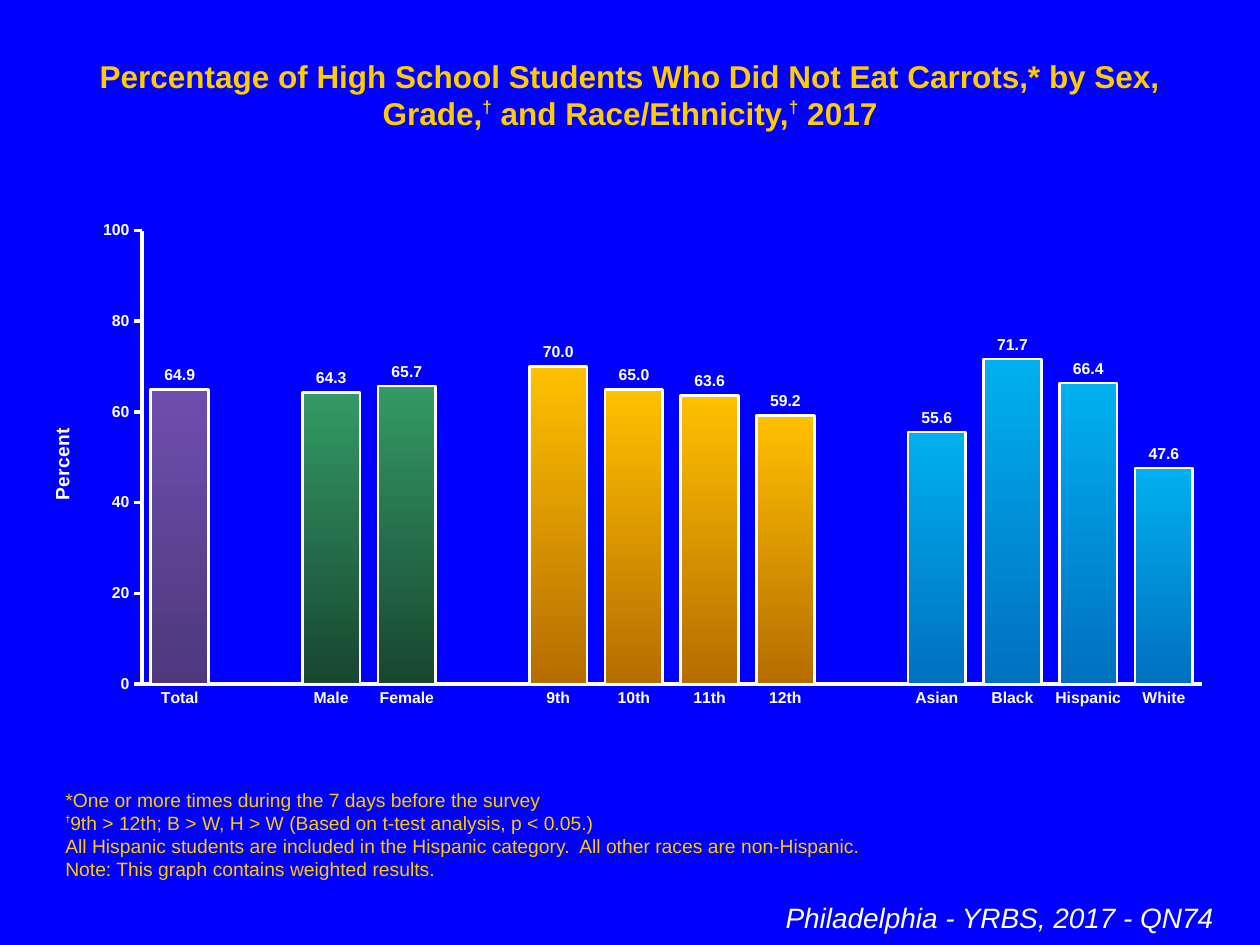
from dataclasses import dataclass

from lxml import etree
from pptx import Presentation
from pptx.chart.data import CategoryChartData
from pptx.dml.color import RGBColor
from pptx.enum.chart import XL_CHART_TYPE, XL_LABEL_POSITION, XL_TICK_MARK
from pptx.enum.text import MSO_ANCHOR, MSO_AUTO_SIZE, PP_ALIGN as Align
from pptx.oxml.ns import qn
from pptx.util import Inches, Pt


@dataclass(frozen=True)
class Theme:
    font: str = "Arial"
    background: str = "0000FF"
    accent: str = "FFCC00"
    light: str = "FFFFFF"
    series: str = "26CA59"
    title_size: int = 18
    title_mark_size: int = 17
    note_size: int = 11
    note_mark_size: int = 9
    source_size: int = 16
    axis_title_size: int = 11
    chart_size: int = 9
    axis_width: float = 2
    bar_line_width: float = 1.5


THEME = Theme()
MARK = "†"
TITLE = [["Percentage of High School Students Who Did Not Eat Carrots,* by Sex, Grade,",
          MARK, " and Race/Ethnicity,", MARK, " 2017"]]
NOTES = [
    ["*One or more times during the 7 days before the survey"],
    [MARK, "9th > 12th; B > W, H > W (Based on t-test analysis, p < 0.05.)"],
    ["All Hispanic students are included in the Hispanic category.  All other races are non-Hispanic."],
    ["Note: This graph contains weighted results."],
]
SOURCE = [["Philadelphia - YRBS, 2017 - QN74"]]
GROUPS = [
    (("6E4EAE", "4F387C"), [("Total", 64.9)]),
    (("339966", "18472F"), [("Male", 64.3), ("Female", 65.7)]),
    (("FFC000", "B66D00"), [("9th", 70.0), ("10th", 65.0), ("11th", 63.6), ("12th", 59.2)]),
    (("00B0F0", "0070C0"), [("Asian", 55.6), ("Black", 71.7), ("Hispanic", 66.4), ("White", 47.6)]),
]
PLOT_AREA = {"x": 0.1, "y": 0.04, "w": 0.88, "h": 0.9}


def color(value):
    """Return an RGB colour from its hex text."""
    return RGBColor.from_string(value)


def style_font(font, size, value, bold=False, italic=False):
    """Apply the theme font with the given look."""
    font.name = THEME.font
    font.size = Pt(size)
    font.bold = bold
    font.italic = italic
    font.color.rgb = color(value)


def add_text(slide, box, lines, size, value, align=Align.LEFT, anchor=MSO_ANCHOR.TOP,
             bold=False, italic=False, mark_size=None, mark_bold=False, mark_rise=0):
    """Add a text box whose dagger runs are raised."""
    shape = slide.shapes.add_textbox(*map(Inches, box))
    frame = shape.text_frame
    frame.word_wrap = True
    frame.auto_size = MSO_AUTO_SIZE.SHAPE_TO_FIT_TEXT
    frame.vertical_anchor = anchor
    for index, pieces in enumerate(lines):
        paragraph = frame.paragraphs[0] if index == 0 else frame.add_paragraph()
        paragraph.alignment = align
        for piece in pieces:
            run = paragraph.add_run()
            run.text = piece
            if piece == MARK:
                style_font(run.font, mark_size, value, mark_bold, italic)
                run._r.get_or_add_rPr().set("baseline", str(mark_rise * 1000))
            else:
                style_font(run.font, size, value, bold, italic)


def style_axis(axis, tick_mark):
    """Give an axis its line, labels and tick marks."""
    axis.has_major_gridlines = False
    axis.major_tick_mark = tick_mark
    axis.minor_tick_mark = XL_TICK_MARK.NONE
    axis.format.line.color.rgb = color(THEME.light)
    axis.format.line.width = Pt(THEME.axis_width)
    style_font(axis.tick_labels.font, THEME.chart_size, THEME.light, bold=True)


def place_plot_area(chart):
    """Fix the inner plot area as fractions of the chart."""
    plot_area = chart._chartSpace.find(".//" + qn("c:plotArea"))
    for old_layout in plot_area.findall(qn("c:layout")):
        plot_area.remove(old_layout)
    layout = etree.Element(qn("c:layout"))
    manual = etree.SubElement(layout, qn("c:manualLayout"))
    settings = {"layoutTarget": "inner", "xMode": "edge", "yMode": "edge", **PLOT_AREA}
    for name, value in settings.items():
        etree.SubElement(manual, qn(f"c:{name}")).set("val", str(value))
    plot_area.insert(0, layout)


def add_chart(slide):
    """Add the column chart with one gradient per group."""
    bars = []
    for gradient, members in GROUPS:
        if bars:
            bars.append(("", None, None))
        bars.extend((label, value, gradient) for label, value in members)
    data = CategoryChartData()
    data.categories = [label for label, _, _ in bars]
    data.add_series("Series 1", [value for _, value, _ in bars])
    box = map(Inches, (0.17, 1.67, 9.56, 4))
    chart = slide.shapes.add_chart(XL_CHART_TYPE.COLUMN_CLUSTERED, *box, data).chart
    chart.has_title = False
    chart.has_legend = False
    style_font(chart.font, THEME.title_size, THEME.light)
    place_plot_area(chart)

    style_axis(chart.category_axis, XL_TICK_MARK.NONE)
    value_axis = chart.value_axis
    style_axis(value_axis, XL_TICK_MARK.OUTSIDE)
    value_axis.minimum_scale = 0
    value_axis.maximum_scale = 100
    value_axis.major_unit = 20
    title_frame = value_axis.axis_title.text_frame
    title_frame.text = "Percent"
    style_font(title_frame.paragraphs[0].runs[0].font, THEME.axis_title_size, THEME.light, bold=True)

    plot = chart.plots[0]
    plot.vary_by_categories = False
    plot.gap_width = 31
    plot.overlap = 100
    series = plot.series[0]
    series.format.fill.solid()
    series.format.fill.fore_color.rgb = color(THEME.series)
    labels = series.data_labels
    labels.show_value = True
    labels.number_format = "#,##0.0"
    labels.number_format_is_linked = False
    labels.position = XL_LABEL_POSITION.OUTSIDE_END
    style_font(labels.font, THEME.chart_size, THEME.light, bold=True)

    for index, (_, _, gradient) in enumerate(bars):
        if gradient:
            bar_format = series.points[index].format
            bar_format.fill.gradient()
            bar_format.fill.gradient_angle = 270
            for stop, value in zip(bar_format.fill.gradient_stops, gradient):
                stop.color.rgb = color(value)
            bar_format.line.color.rgb = color(THEME.light)
            bar_format.line.width = Pt(THEME.bar_line_width)


def main():
    """Build and save the slide."""
    presentation = Presentation()
    presentation.slide_width = Inches(10)
    presentation.slide_height = Inches(7.5)
    slide = presentation.slides.add_slide(presentation.slide_layouts[6])
    slide.background.fill.solid()
    slide.background.fill.fore_color.rgb = color(THEME.background)
    add_text(slide, (0.5, 0.4, 9, 0.4), TITLE, THEME.title_size, THEME.accent, Align.CENTER,
             bold=True, mark_size=THEME.title_mark_size, mark_bold=True, mark_rise=40)
    add_text(slide, (0.42, 6.75, 9.17, 0.29), NOTES, THEME.note_size, THEME.accent,
             anchor=MSO_ANCHOR.BOTTOM, mark_size=THEME.note_mark_size, mark_bold=True, mark_rise=50)
    add_text(slide, (0.33, 7.1, 9.4, 0.37), SOURCE, THEME.source_size, THEME.light, Align.RIGHT,
             italic=True)
    add_chart(slide)
    presentation.save("out.pptx")


if __name__ == "__main__":
    main()
